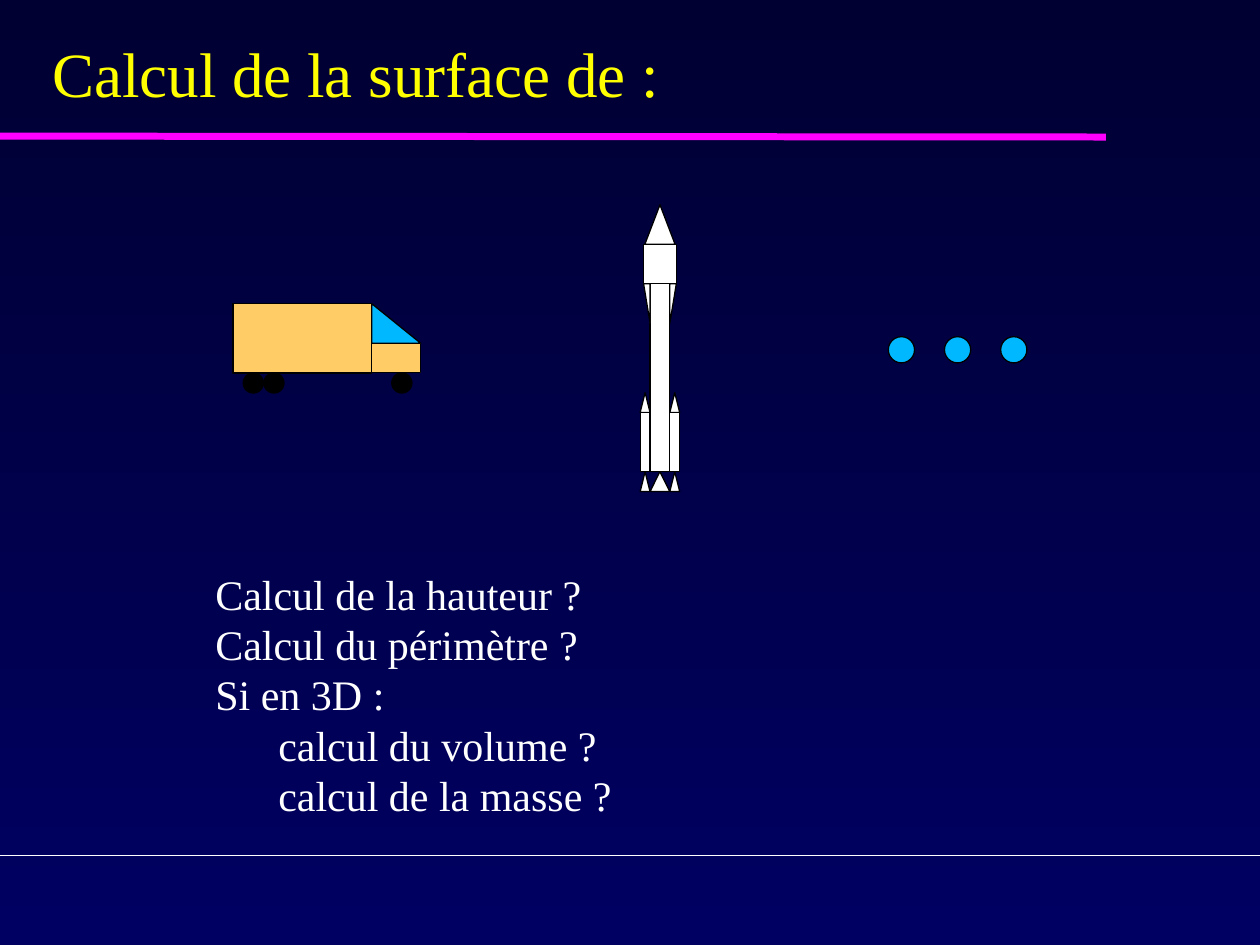
from lxml.etree import SubElement
from pptx import Presentation
from pptx.dml.color import RGBColor
from pptx.enum.shapes import MSO_CONNECTOR, MSO_SHAPE
from pptx.enum.text import MSO_ANCHOR
from pptx.oxml.ns import qn
from pptx.util import Pt

COLORS = {
    "night": "000032", "navy": "000062", "white": "FFFFFF", "black": "000000",
    "magenta": "FF00FF", "yellow": "FFFF00", "orange": "FFCC66", "sky": "00B8FF",
}
FONT = "Times New Roman"
QUESTIONS = [
    "Calcul de la hauteur ?",
    "Calcul du périmètre ?",
    "Si en 3D :",
    "\tcalcul du volume ?",
    "\tcalcul de la masse ?",
]


def rgb(name):
    return RGBColor.from_string(COLORS[name])


def add_background(slide):
    fill = slide.background.fill
    fill.gradient()
    fill.gradient_angle = 270
    for stop, color, position in zip(fill.gradient_stops, ("night", "navy"), (0, 1)):
        stop.color.rgb = rgb(color)
        stop.position = position


def add_rule(slide, start, end, color, weight):
    rule = slide.shapes.add_connector(MSO_CONNECTOR.STRAIGHT, *map(Pt, start + end))
    rule.line.color.rgb = rgb(color)
    rule.line.width = Pt(weight)
    SubElement(rule._element.spPr, qn("a:effectLst"))


def add_part(group, kind, left, top, width, height, color, flip=""):
    """Add an outlined shape; flip may hold "H" and "V"."""
    part = group.shapes.add_shape(kind, *map(Pt, (left, top, width, height)))
    part.shadow.inherit = False
    part.fill.solid()
    part.fill.fore_color.rgb = rgb(color)
    part.line.color.rgb = rgb("black")
    part.line.width = Pt(0.75)
    for axis in flip:
        part._element.spPr.find(qn("a:xfrm")).set(f"flip{axis}", "1")


def style_text(paragraph, size, color):
    paragraph.font.name = FONT
    paragraph.font.size = Pt(size)
    paragraph.font.color.rgb = rgb(color)


def add_title(slide, left, top, width, height):
    frame = slide.shapes.add_textbox(*map(Pt, (left, top, width, height))).text_frame
    frame.word_wrap = True
    frame.vertical_anchor = MSO_ANCHOR.MIDDLE
    frame.margin_left = frame.margin_right = frame.margin_top = frame.margin_bottom = 0
    title = frame.paragraphs[0]
    title.text = "Calcul de la surface de :"
    title.line_spacing = 0.74
    style_text(title, 36, "yellow")


def add_truck(slide, left, top):
    truck = slide.shapes.add_group_shape()
    cargo_width, cargo_height = 79.2, 39.6
    cab_left, cab_width, windshield = left + cargo_width, 28.1, 22.7
    add_part(truck, MSO_SHAPE.RECTANGLE, left, top, cargo_width, cargo_height, "orange")
    add_part(truck, MSO_SHAPE.RIGHT_TRIANGLE, cab_left, top, cab_width, windshield, "sky")
    add_part(truck, MSO_SHAPE.RECTANGLE, cab_left, top + windshield,
             cab_width, cargo_height - windshield, "orange")
    for wheel in (5.8, 17.6, 90.7):
        add_part(truck, MSO_SHAPE.OVAL, left + wheel, top + cargo_height, 11.5, 11.5, "black")


def add_rocket(slide, left, top):
    rocket = slide.shapes.add_group_shape()
    unit = 11.3
    booster = unit / 2
    body_left, body_right = left + booster, left + booster + unit
    capsule_top, body_top = top + 2 * unit, top + 4 * unit
    body_height = 9.5 * unit
    base = body_top + body_height
    capsule_left, fin = left + 2, 3.7

    def add_white(kind, *box, flip=""):
        add_part(rocket, kind, *box, "white", flip)

    add_white(MSO_SHAPE.ISOSCELES_TRIANGLE, capsule_left + 0.7, top, 17.3, 2 * unit)
    add_white(MSO_SHAPE.RECTANGLE, capsule_left, capsule_top, 18.7, 2 * unit)
    add_white(MSO_SHAPE.RECTANGLE, body_left, body_top, unit, body_height)
    add_white(MSO_SHAPE.RIGHT_TRIANGLE, body_right, body_top, fin, 2 * unit, flip="V")
    add_white(MSO_SHAPE.RIGHT_TRIANGLE, capsule_left, body_top, fin, 2 * unit, flip="HV")
    for side in (body_right, left):
        add_white(MSO_SHAPE.ISOSCELES_TRIANGLE, side, base - 4 * unit, booster, unit)
        add_white(MSO_SHAPE.RECTANGLE, side, base - 3 * unit, booster, 3 * unit)
        add_white(MSO_SHAPE.ISOSCELES_TRIANGLE, side, base, booster, unit)
    add_white(MSO_SHAPE.ISOSCELES_TRIANGLE, body_left, base, unit, unit)


def add_dots(slide, left, top):
    dots = slide.shapes.add_group_shape()
    for index in range(3):
        add_part(dots, MSO_SHAPE.OVAL, left + 32.1 * index, top, 15, 15, "sky")


def add_questions(slide, left, top, width, height):
    frame = slide.shapes.add_textbox(*map(Pt, (left, top, width, height))).text_frame
    frame.word_wrap = False
    for index, question in enumerate(QUESTIONS):
        paragraph = frame.add_paragraph() if index else frame.paragraphs[0]
        paragraph.text = question
        paragraph.line_spacing = Pt(28.8)
        if question.startswith("\t"):
            tabs = SubElement(paragraph._p.get_or_add_pPr(), qn("a:tabLst"))
            SubElement(tabs, qn("a:tab"), pos=str(Pt(36)), algn="l")
        style_text(paragraph, 24, "white")


def main():
    deck = Presentation()
    deck.slide_width, deck.slide_height = Pt(720), Pt(540)
    slide = deck.slides.add_slide(deck.slide_layouts[6])
    add_background(slide)
    add_rule(slide, (0, 488.9), (720, 488.9), "white", 0.75)
    add_rule(slide, (0, 77.8), (632, 78.3), "magenta", 4)
    add_title(slide, 30, 22.3, 689, 48.2)
    add_truck(slide, 133.2, 173.5)
    add_rocket(slide, 365.8, 117)
    add_dots(slide, 507.6, 192.4)
    add_questions(slide, 116, 321.1, 242.6, 152.6)
    deck.save("out.pptx")


if __name__ == "__main__":
    main()
